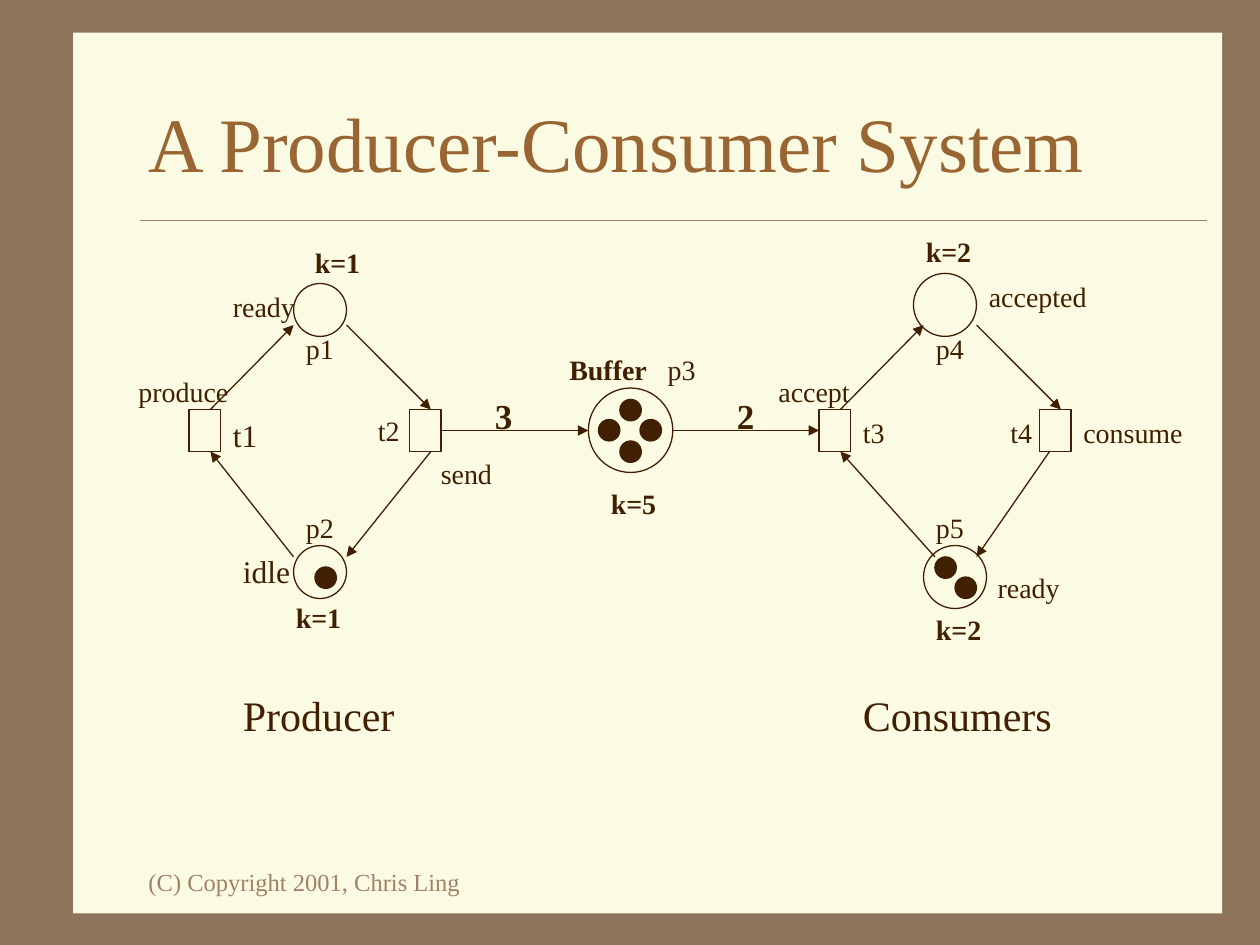
from lxml.etree import SubElement
from pptx import Presentation
from pptx.dml.color import RGBColor
from pptx.enum.shapes import MSO_CONNECTOR, MSO_SHAPE
from pptx.enum.text import MSO_ANCHOR, MSO_AUTO_SIZE, PP_ALIGN
from pptx.oxml.ns import qn
from pptx.util import Inches, Pt

FONT = "Times New Roman"
BROWN = RGBColor(0x8C, 0x73, 0x5A)
CREAM = RGBColor(0xFB, 0xFA, 0xE2)
TAN = RGBColor(0xA0, 0x83, 0x66)
TITLE = RGBColor(0x99, 0x66, 0x33)
INK = RGBColor(0x40, 0x20, 0x00)

BOX_TOP, BOX_W, BOX_H = 3.25, 0.25, 1 / 3
BOX_BOTTOM = BOX_TOP + BOX_H
MID = BOX_TOP + BOX_H / 2
TOKEN = 0.17

TRANSITIONS = {"t1": 1.5, "t2": 3.25, "t3": 6.5, "t4": 8.25}

# Left, top, diameter
PLACES = [
    (2.33, 2.25, 0.42),  # p1
    (2.33, 4.33, 0.42),  # p2
    (4.67, 3.08, 0.67),  # p3, the buffer
    (7.25, 2.17, 0.5),   # p4
    (7.33, 4.33, 0.5),   # p5
]

TOKENS = [
    (2.5, 4.5),
    (4.92, 3.17), (4.75, 3.33), (5.08, 3.33), (4.92, 3.5),
    (7.42, 4.42), (7.58, 4.58),
]

# From x, y to x, y
ARCS = [
    (1.67, BOX_TOP, 2.33, 2.58), (2.75, 2.58, 3.42, BOX_TOP),
    (3.42, BOX_BOTTOM, 2.75, 4.42), (2.33, 4.42, 1.67, BOX_BOTTOM),
    (6.67, BOX_TOP, 7.33, 2.58), (7.75, 2.58, 8.42, BOX_TOP),
    (8.33, BOX_BOTTOM, 7.75, 4.42), (7.42, 4.42, 6.67, BOX_BOTTOM),
]

# Text, left, top, width, size, bold
LABELS = [
    ("ready", 1.75, 2.25, 0.7, 16, False),
    ("p1", 2.33, 2.58, 0.42, 16, False),
    ("t1", 1.75, 3.25, 0.4, 18, False),
    ("produce", 1, 2.92, 0.92, 16, False),
    ("idle", 1.83, 4.33, 0.58, 18, False),
    ("send", 3.4, 3.57, 0.61, 16, False),
    ("p2", 2.33, 4, 0.42, 16, False),
    ("t2", 2.9, 3.23, 0.38, 16, False),
    ("k=1", 2.4, 1.9, 0.56, 16, True),
    ("k=1", 2.25, 4.72, 0.56, 16, True),
    ("k=5", 4.75, 3.81, 0.56, 16, True),
    ("3", 3.83, 3.08, 0.34, 20, True),
    ("2", 5.75, 3.08, 0.34, 20, True),
    ("t3", 6.75, 3.25, 0.38, 16, False),
    ("t4", 7.92, 3.25, 0.38, 16, False),
    ("p4", 7.33, 2.58, 0.42, 16, False),
    ("p5", 7.33, 4, 0.42, 16, False),
    ("k=2", 7.25, 1.81, 0.56, 16, True),
    ("k=2", 7.33, 4.81, 0.56, 16, True),
    ("accept", 6.08, 2.92, 0.77, 16, False),
    ("accepted", 7.75, 2.17, 0.98, 16, False),
    ("consume", 8.5, 3.25, 0.99, 16, False),
    ("ready", 7.82, 4.48, 0.7, 16, False),
    ("Producer", 1.83, 5.42, 1.4, 24, False),
    ("Consumers", 6.75, 5.42, 1.7, 24, False),
]


def style_font(font, size, color, bold=False):
    font.name = FONT
    font.size = Pt(size)
    font.bold = bold
    font.color.rgb = color


def add_shape(s, kind, x, y, w, h, fill=None, line=INK):
    sp = s.shapes.add_shape(kind, Inches(x), Inches(y), Inches(w), Inches(h))
    sp.shadow.inherit = False
    if fill is None:
        sp.fill.background()
    else:
        sp.fill.solid()
        sp.fill.fore_color.rgb = fill
    if line is None:
        sp.line.fill.background()
    else:
        sp.line.color.rgb = line
        sp.line.width = Pt(0.75)
    return sp


def add_line(s, x1, y1, x2, y2, color=INK, width=0.75, arrow=True):
    cxn = s.shapes.add_connector(MSO_CONNECTOR.STRAIGHT, Inches(x1), Inches(y1),
                                 Inches(x2), Inches(y2))
    cxn.line.color.rgb = color
    cxn.line.width = Pt(width)
    if arrow:
        SubElement(cxn.line._get_or_add_ln(), qn("a:tailEnd"), type="triangle")
    SubElement(cxn._element.spPr, qn("a:effectLst"))
    return cxn


def add_label(s, text, x, y, w, size, bold=False, color=INK, wrap=False):
    height = size * 1.2 / 72 + 0.1
    sp = s.shapes.add_textbox(Inches(x), Inches(y), Inches(w), Inches(height))
    tf = sp.text_frame
    tf.word_wrap = wrap
    tf.auto_size = MSO_AUTO_SIZE.SHAPE_TO_FIT_TEXT
    tf.text = text
    style_font(tf.paragraphs[0].runs[0].font, size, color, bold)
    return sp


def add_buffer_label(s):
    sp = add_label(s, "Buffer", 4.42, 2.75, 1.21, 16, True, wrap=True)
    p = sp.text_frame.paragraphs[0]
    tabs = SubElement(p._p.get_or_add_pPr(), qn("a:tabLst"))
    SubElement(tabs, qn("a:tab"), pos=str(Inches(0.78)), algn="l")
    r = p.add_run()
    r.text = "\tp3"
    style_font(r.font, 16, INK)


def add_frame(s):
    s.background.fill.solid()
    s.background.fill.fore_color.rgb = BROWN
    panel = add_shape(s, MSO_SHAPE.RECTANGLE, 0.58, 0.26, 9.12, 6.99, CREAM, None)
    s.shapes._spTree.insert(2, panel._element)  # behind the title
    add_line(s, 1.11, 1.75, 9.58, 1.75, TAN, 0.25, arrow=False)
    add_label(s, "(C) Copyright 2001, Chris Ling", 1.08, 6.83, 2.75, 14,
              color=TAN, wrap=True)


def set_title(s, text):
    sp = s.shapes.title
    sp.left, sp.top = Inches(1.08), Inches(0.5)
    sp.width, sp.height = Inches(8.5), Inches(1.25)
    tf = sp.text_frame
    tf.text = text
    tf.auto_size = MSO_AUTO_SIZE.NONE
    tf.vertical_anchor = MSO_ANCHOR.MIDDLE
    p = tf.paragraphs[0]
    p.alignment = PP_ALIGN.LEFT
    style_font(p.runs[0].font, 44, TITLE)


def add_net(s):
    # Places, transitions and tokens
    for x, y, d in PLACES:
        add_shape(s, MSO_SHAPE.OVAL, x, y, d, d)
    boxes = {name: add_shape(s, MSO_SHAPE.RECTANGLE, x, BOX_TOP, BOX_W, BOX_H)
             for name, x in TRANSITIONS.items()}
    for x, y in TOKENS:
        add_shape(s, MSO_SHAPE.OVAL, x, y, TOKEN, TOKEN, INK)

    # Arcs of the two cycles, then those through the buffer
    for arc in ARCS:
        add_line(s, *arc)
    add_line(s, 3.5, MID, 4.67, MID).begin_connect(boxes["t2"], 3)
    add_line(s, 5.33, MID, 6.5, MID).end_connect(boxes["t3"], 1)


def main():
    prs = Presentation()
    prs.slide_width, prs.slide_height = Inches(10), Inches(7.5)
    s = prs.slides.add_slide(prs.slide_layouts[5])
    add_frame(s)
    set_title(s, "A Producer-Consumer System")
    add_net(s)
    for label in LABELS:
        add_label(s, *label)
    add_buffer_label(s)
    prs.save("out.pptx")


if __name__ == "__main__":
    main()
